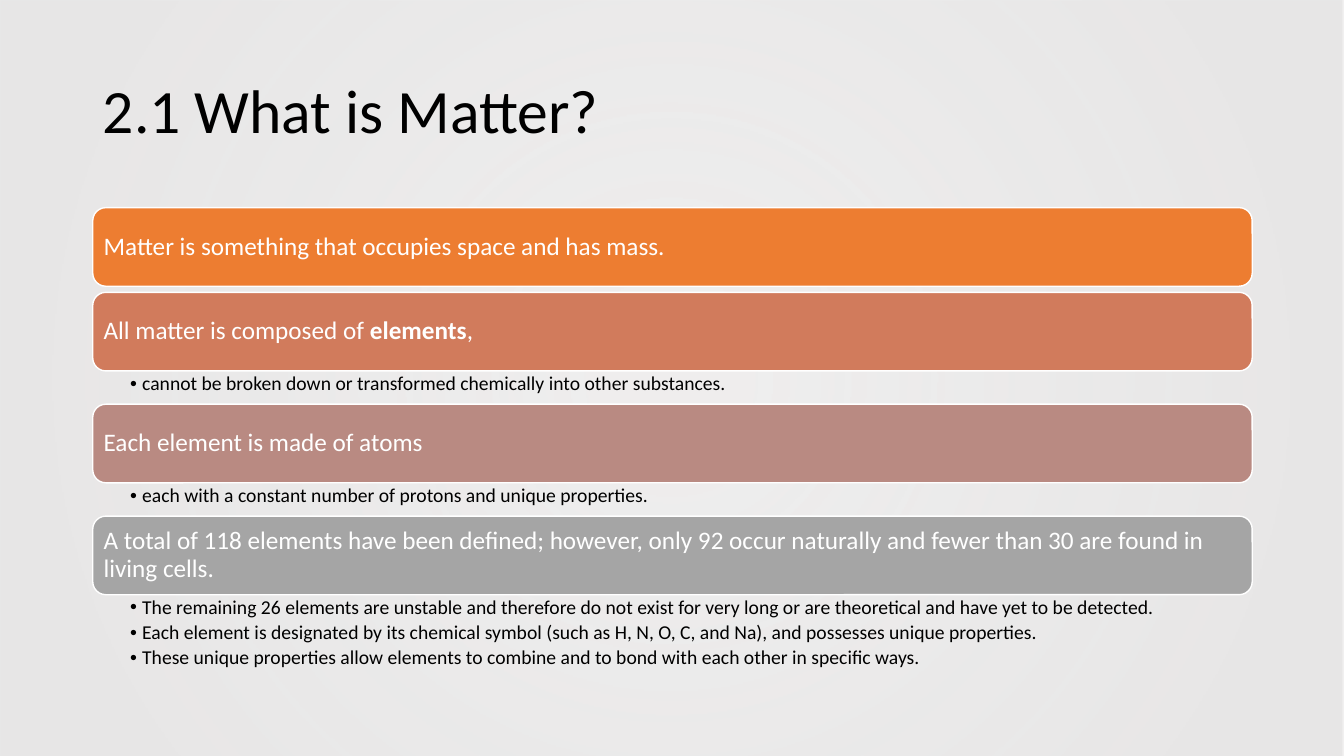
"""Build the slide on matter: a title and four bars with bullet lists below them."""
import pptx
import pptx.util
import pptx.dml.color
import pptx.enum.shapes
import pptx.enum.text
import pptx.oxml.ns
import lxml.etree

Inches = pptx.util.Inches
Pt = pptx.util.Pt
qn = pptx.oxml.ns.qn
anchor = pptx.enum.text.MSO_ANCHOR
kind = pptx.enum.shapes.MSO_SHAPE

theme = {
    "font": "Calibri", "title": 44, "bar": 18, "list": 14,
    "ink": "000000", "light": "FFFFFF", "glow": "E7E6E6",
    "bars": ["ED7D31", "D17B5C", "B98A82", "A5A5A5"],
}


def color(name):
    return pptx.dml.color.RGBColor.from_string(name)


def style(para, size, ink, after=0):
    para.alignment = pptx.enum.text.PP_ALIGN.LEFT
    para.line_spacing = 0.9
    para.space_before = Pt(0)
    para.space_after = Pt(after)
    for run in para.runs:
        run.font.name = theme["font"]
        run.font.size = Pt(size)
        run.font.color.rgb = color(ink)


deck = pptx.Presentation()
deck.slide_width, deck.slide_height = Inches(13.33), Inches(7.5)
slide = deck.slides.add_slide(deck.slide_layouts.get_by_name("Comparison"))
left, width = Inches(0.92), Inches(11.5)

back = slide.shapes.add_shape(kind.RECTANGLE, 0, 0, deck.slide_width, deck.slide_height)
back.shadow.inherit = False
back.line.fill.background()
back.fill.gradient()
for stop, (place, alpha) in zip(back.fill.gradient_stops, [(0.1, 68), (0.85, 97)]):
    stop.position = place
    stop.color.rgb = color(theme["glow"])
for node, alpha in zip(back.element.iter(qn("a:srgbClr")), [68, 97]):
    lxml.etree.SubElement(node, qn("a:alpha"), val=str(alpha * 1000))
grad = back.element.spPr.find(qn("a:gradFill"))
grad.remove(grad.find(qn("a:lin")))
ring = lxml.etree.SubElement(grad, qn("a:path"), {"path": "circle"})
lxml.etree.SubElement(ring, qn("a:fillToRect"), dict.fromkeys("ltrb", "50000"))
slide.shapes._spTree.insert(2, back.element)

title = slide.shapes.title
title.left, title.top, title.width, title.height = left, Inches(0.4), width, Inches(1.45)
title.text_frame.text = "2.1 What is Matter?"
title.text_frame.vertical_anchor = anchor.MIDDLE
title.text_frame.auto_size = pptx.enum.text.MSO_AUTO_SIZE.NONE
style(title.text_frame.paragraphs[0], theme["title"], theme["ink"])

topics = [
    (["Matter is something that occupies space and has mass."], [], 0.06),
    (["All matter is composed of\u00a0", "elements", ","],
     ["cannot be broken down or transformed chemically into other substances."], 0.33),
    (["Each element is made of atoms"],
     ["each with a constant number of protons and unique properties."], 0.33),
    (["A total of 118 elements have been defined; however, only 92 occur naturally "
      "and fewer than 30 are found in living cells."],
     ["The remaining 26 elements are unstable and therefore do not exist for very long "
      "or are theoretical and have yet to be detected.",
      "Each element is designated by its chemical symbol (such as H, N, O, C, and Na), "
      "and possesses unique properties.",
      "These unique properties allow elements to combine and to bond with each other "
      "in specific ways."], 0.79),
]
bodies = [item for item in slide.placeholders if item.placeholder_format.idx > 0]
top, tall = 2.06, 0.78

for (parts, points, gap), fill in zip(topics, theme["bars"]):
    bar = slide.shapes.add_shape(kind.ROUNDED_RECTANGLE, left, Inches(top), width, Inches(tall))
    bar.shadow.inherit = False
    bar.fill.solid()
    bar.fill.fore_color.rgb = color(fill)
    bar.line.color.rgb = color(theme["light"])
    bar.line.width = Pt(1)
    frame = bar.text_frame
    frame.word_wrap = True
    frame.vertical_anchor = anchor.MIDDLE
    frame.margin_left = frame.margin_right = Inches(0.07)
    frame.margin_top = frame.margin_bottom = Inches(0.07)
    for part in parts:
        run = frame.paragraphs[0].add_run()
        run.text = part
        run.font.bold = part == "elements"
    style(frame.paragraphs[0], theme["bar"], theme["light"])
    top += tall

    if points:
        body = bodies.pop(0)
        body.left, body.top, body.width, body.height = left, Inches(top), width, Inches(gap)
        frame = body.text_frame
        frame.text = "\n".join(points)
        frame.word_wrap = True
        frame.auto_size = pptx.enum.text.MSO_AUTO_SIZE.NONE
        frame.vertical_anchor = anchor.TOP
        frame.margin_left, frame.margin_right = Inches(0.37), Inches(0.14)
        frame.margin_top = frame.margin_bottom = Inches(0.03)
        for para in frame.paragraphs:
            para.level = 1
            props = para._p.get_or_add_pPr()
            props.set("marL", str(Inches(0.12)))
            props.set("indent", str(Inches(-0.12)))
            lxml.etree.SubElement(props, qn("a:buChar"), char="•")
            para.font.bold = False
            for run in para.runs:
                run.font.bold = False
            style(para, theme["list"], theme["ink"], 2.8)
    top += gap

for body in bodies:
    body.element.getparent().remove(body.element)

deck.save("out.pptx")
